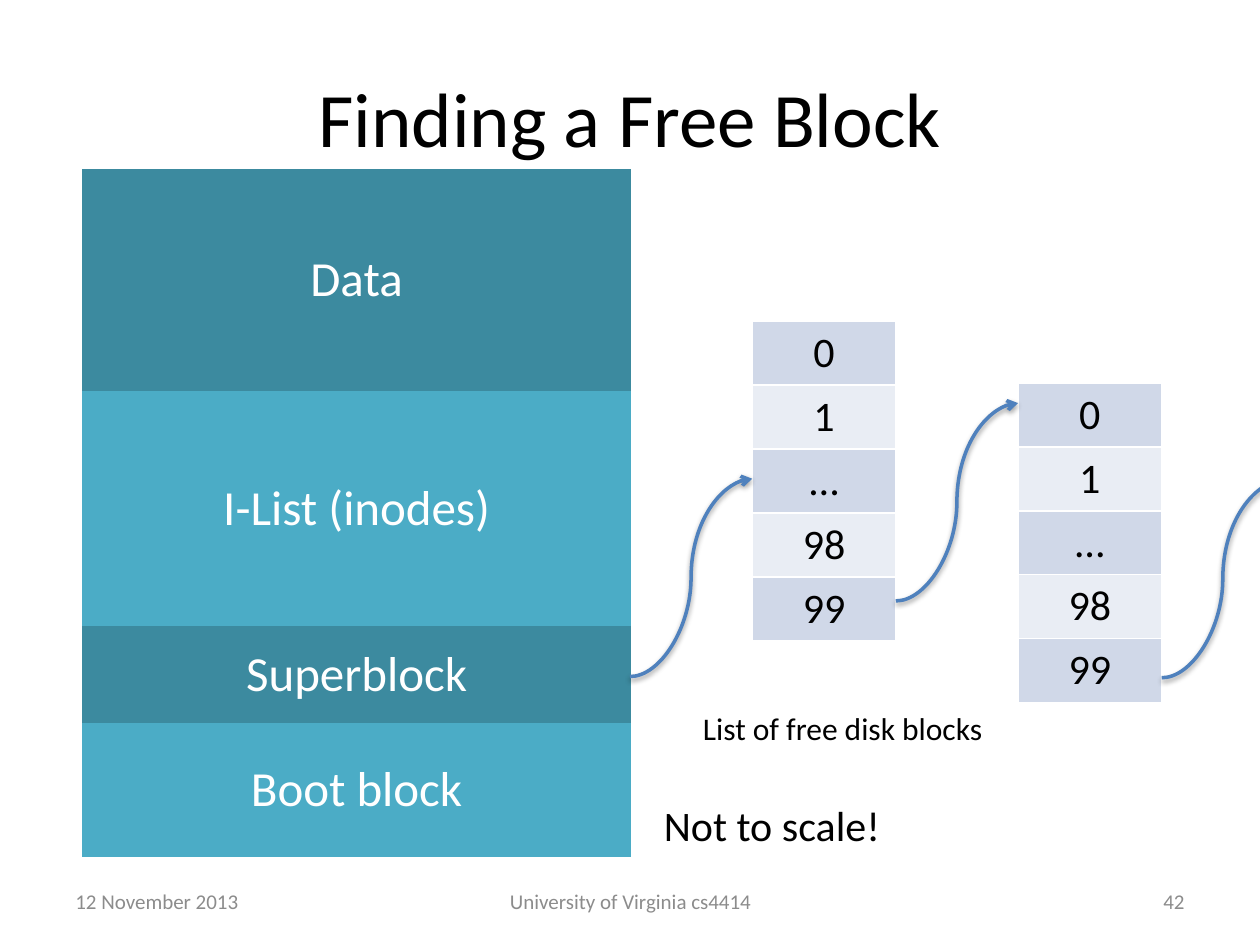
from dataclasses import dataclass

from lxml import etree
from pptx import Presentation
from pptx import util as u
from pptx.dml.color import RGBColor
from pptx.enum import shapes, text
from pptx.oxml import parse_xml
from pptx.oxml.ns import nsdecls, qn

COLUMNS, ROWS = 100, 75
WIDTH, HEIGHT = u.Inches(10), u.Inches(7.5)
PLAIN_TABLE = "{2D5ABB26-0587-4C30-8999-92F81FD0307C}"
LEFT, CENTER, RIGHT = text.PP_ALIGN.LEFT, text.PP_ALIGN.CENTER, text.PP_ALIGN.RIGHT
TOP, MIDDLE = text.MSO_ANCHOR.TOP, text.MSO_ANCHOR.MIDDLE


@dataclass(frozen=True)
class Area:
    """A rectangle in grid columns and rows."""
    left: float
    top: float
    width: float
    height: float

    def emu(self) -> tuple:
        """Return left, top, width and height as lengths."""
        return across(self.left), down(self.top), across(self.width), down(self.height)


@dataclass(frozen=True)
class Label:
    """A free-standing text with its format."""
    words: str
    area: Area
    size: int
    color: str = "000000"
    align: text.PP_ALIGN = LEFT
    anchor: text.MSO_ANCHOR = TOP
    wrap: bool = False


@dataclass(frozen=True)
class Stack:
    """A one-column table with alternating fills."""
    entries: tuple
    left: float
    top: float
    width: float
    heights: tuple
    fills: tuple
    size: int
    color: str
    anchor: text.MSO_ANCHOR = TOP
    border: str = ""


def free_list(left: float, top: float) -> Stack:
    """Describe one list of free block numbers."""
    return Stack(("0", "1", "…", "98", "99"), left, top, 11.4, (5,) * 5,
                 ("D0D8E8", "E9EDF4"), 24, "000000", border="FFFFFF")


DISK = Stack(("Data", "I-List (inodes)", "Superblock", "Boot block"), 6.5, 13.4, 43.6,
             (17.6, 18.7, 7.7, 10.6), ("3C8A9F", "4BACC6"), 28, "FFFFFF", MIDDLE)
STACKS = (DISK, free_list(59.7, 25.5), free_list(80.8, 30.4))
LINK_WIDTH, LINK_RISE = 9.7, 15.7
LINK_STARTS = ((50, 53.7), (71.1, 47.7), (92.2, 53.8))
FOOTER = {"size": 12, "color": "8C8C8C", "anchor": MIDDLE, "wrap": True}
LABELS = (
    Label("12 November 2013", Area(5, 69.5, 23.3, 4), **FOOTER),
    Label("University of Virginia cs4414", Area(34.2, 69.5, 31.7, 4), align=CENTER, **FOOTER),
    Label("42", Area(71.7, 69.5, 23.3, 4), align=RIGHT, **FOOTER),
    Label("Not to scale!", Area(51.7, 63, 19.4, 5), 24),
    Label("List of free disk blocks", Area(54.8, 55.8, 24.5, 4), 18),
)


def across(columns: float) -> int:
    """Turn grid columns into a length."""
    return round(WIDTH * columns / COLUMNS)


def down(rows: float) -> int:
    """Turn grid rows into a length."""
    return round(HEIGHT * rows / ROWS)


def paint(target, color: str) -> None:
    """Give a fill a solid colour."""
    target.solid()
    target.fore_color.rgb = RGBColor.from_string(color)


def write(frame, words: str, *, size: int, color: str, align=CENTER) -> None:
    """Put formatted words into a text frame."""
    para = frame.paragraphs[0]
    para.alignment = align
    span = para.add_run()
    span.text = words
    span.font.name = "Calibri"
    span.font.size = u.Pt(size)
    paint(span.font.fill, color)


def add_label(page, label: Label) -> None:
    """Draw a text box."""
    frame = page.shapes.add_textbox(*label.area.emu()).text_frame
    frame.word_wrap = label.wrap
    frame.auto_size = text.MSO_AUTO_SIZE.NONE if label.wrap else text.MSO_AUTO_SIZE.SHAPE_TO_FIT_TEXT
    frame.vertical_anchor = label.anchor
    write(frame, label.words, size=label.size, color=label.color, align=label.align)


def add_borders(cell, color: str) -> None:
    """Draw a thin line on every side of a cell."""
    properties = cell._tc.get_or_add_tcPr()
    for side in ("lnL", "lnR", "lnT", "lnB"):
        properties.append(parse_xml(
            f'<a:{side} {nsdecls("a")} w="12700"><a:solidFill>'
            f'<a:srgbClr val="{color}"/></a:solidFill></a:{side}>'))


def add_stack(page, stack: Stack) -> None:
    """Draw a one-column table."""
    area = Area(stack.left, stack.top, stack.width, sum(stack.heights))
    table = page.shapes.add_table(len(stack.entries), 1, *area.emu()).table
    table.first_row = table.horz_banding = False
    table._tbl.tblPr.find(qn("a:tableStyleId")).text = PLAIN_TABLE
    for index, (entry, height) in enumerate(zip(stack.entries, stack.heights)):
        table.rows[index].height = down(height)
        cell = table.cell(index, 0)
        cell.vertical_anchor = stack.anchor
        if stack.border:
            add_borders(cell, stack.border)
        paint(cell.fill, stack.fills[index % len(stack.fills)])
        write(cell.text_frame, entry, size=stack.size, color=stack.color)


def add_link(page, left: float, bottom: float) -> None:
    """Draw a curved arrow that rises to the next list."""
    link = page.shapes.add_connector(
        shapes.MSO_CONNECTOR.CURVE, across(left), down(bottom),
        across(left + LINK_WIDTH), down(bottom - LINK_RISE))
    link.line.width = u.Pt(2)
    paint(link.line.fill, "4F81BD")
    etree.SubElement(link.line._get_or_add_ln(), qn("a:tailEnd"), type="arrow")
    link._element.spPr.append(parse_xml(
        f'<a:effectLst {nsdecls("a")}><a:outerShdw blurRad="40000" dist="20000" '
        'dir="5400000" rotWithShape="0"><a:srgbClr val="000000"><a:alpha val="38000"/>'
        '</a:srgbClr></a:outerShdw></a:effectLst>'))


def main() -> None:
    """Build the slide and save it."""
    deck = Presentation()
    deck.slide_width, deck.slide_height = WIDTH, HEIGHT
    page = deck.slides.add_slide(deck.slide_layouts.get_by_name("Title Only"))
    title = page.shapes.title
    title.left, title.top, title.width, title.height = Area(5, 3, 90, 12.5).emu()
    title.text_frame.vertical_anchor = MIDDLE
    write(title.text_frame, "Finding a Free Block", size=44, color="000000")
    for stack in STACKS:
        add_stack(page, stack)
    for label in LABELS:
        add_label(page, label)
    for left, bottom in LINK_STARTS:
        add_link(page, left, bottom)
    deck.save("out.pptx")


if __name__ == "__main__":
    main()
